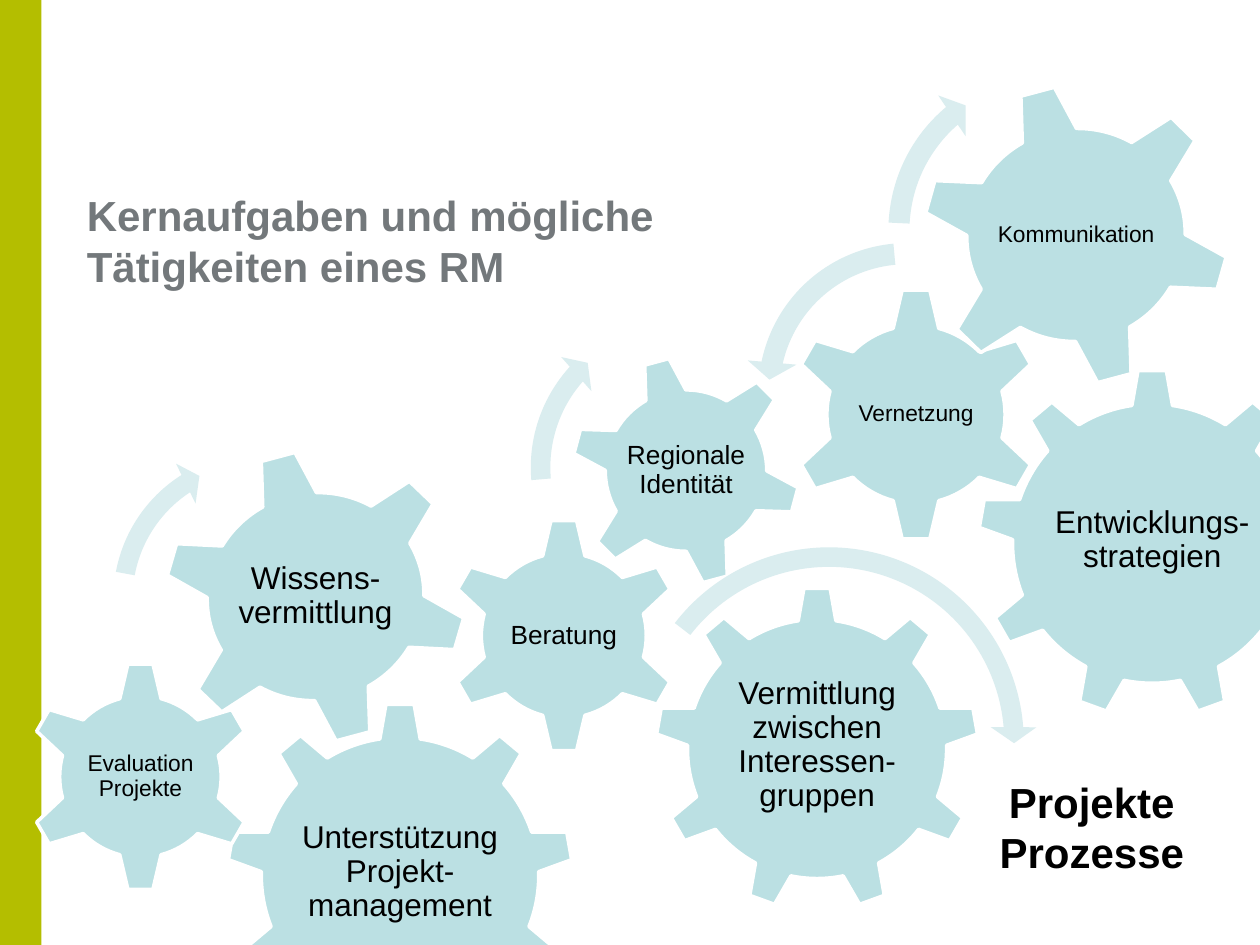
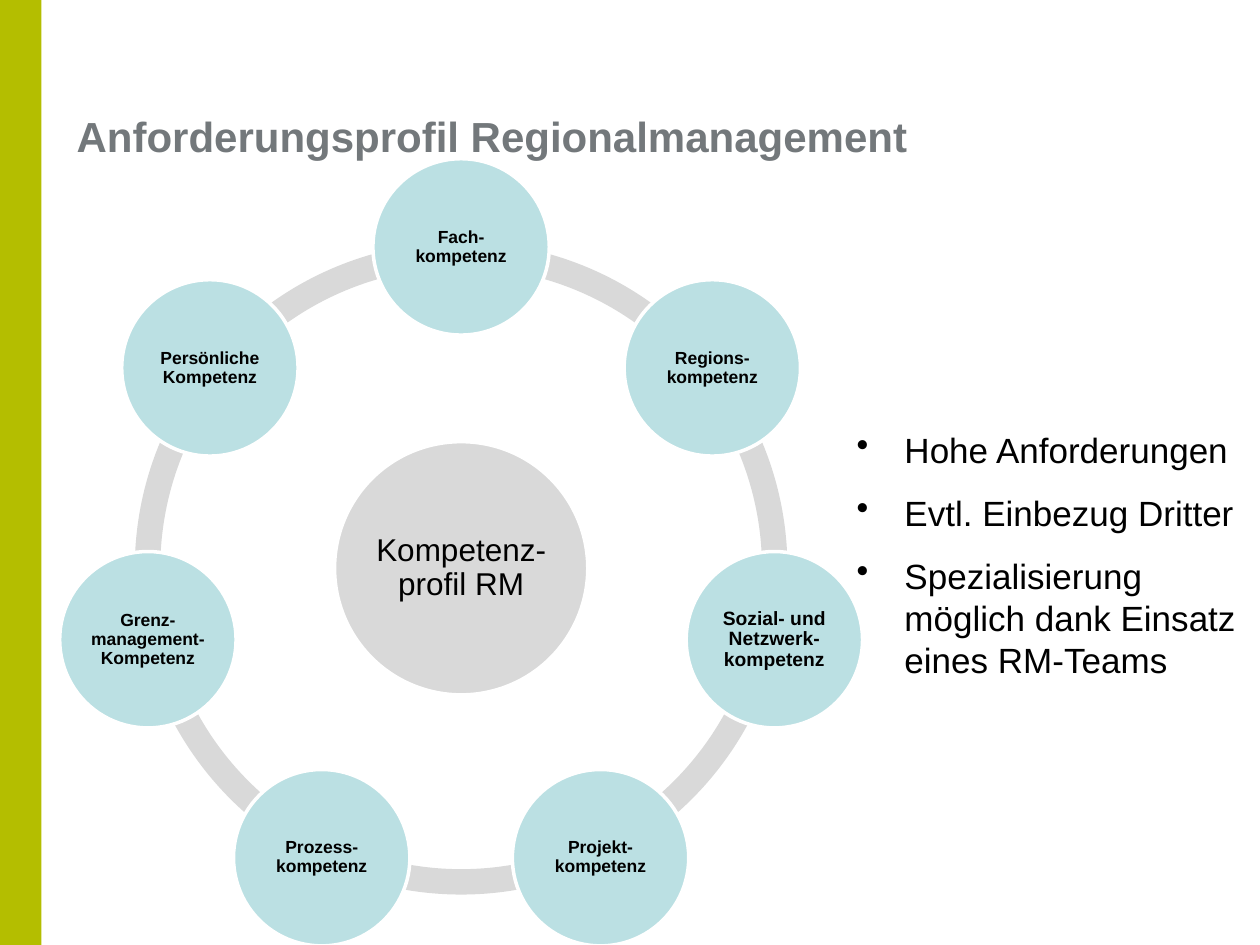
import dataclasses
import math
import typing

import pptx
import pptx.dml.color
import pptx.enum.shapes
import pptx.enum.text
import pptx.util
from lxml import etree
from pptx.util import Inches

# Shared style
FONT = "Arial"
GREEN, GREY, BLACK, WHITE = "B4BE00", "73787B", "000000", "FFFFFF"
TEAL, PALE_TEAL, SILVER = "BBE0E3", "DAEDEF", "D9D9D9"
SLIDE_WIDTH, SLIDE_HEIGHT = 10, 7.5
INSET = 0.02
ADJUST_PER_DEGREE = 0.6

SHAPE = pptx.enum.shapes.MSO_SHAPE
LEFT = pptx.enum.text.PP_ALIGN.LEFT
CENTER = pptx.enum.text.PP_ALIGN.CENTER
TOP = pptx.enum.text.MSO_ANCHOR.TOP
MIDDLE = pptx.enum.text.MSO_ANCHOR.MIDDLE


@dataclasses.dataclass
class Box:
    left: float
    top: float
    width: float
    height: float

    def lengths(self) -> list:
        return [Inches(n) for n in dataclasses.astuple(self)]


def centred_box(x: float, y: float, width: float, height: float) -> Box:
    return Box(x - width / 2, y - height / 2, width, height)


@dataclasses.dataclass
class GearKind:
    shape: typing.Any
    rotation: float
    label_width: float  # share of the gear's width
    label_height: float
    lift: float = 0


NINE_TEETH = GearKind(SHAPE.GEAR_9, 0, 0.6, 0.51, 0.03)
SIX_TEETH = GearKind(SHAPE.GEAR_6, 0, 0.5, 0.49)
SIX_TILTED = GearKind(SHAPE.GEAR_6, 345, 0.56, 0.56)


@dataclasses.dataclass
class Gear:
    kind: GearKind
    box: Box
    label: str
    size: float


@dataclasses.dataclass
class ArrowKind:
    shape: typing.Any
    adjustments: tuple


WIDE_ARC = ArrowKind(SHAPE.CIRCULAR_ARROW, (0.047, 2.99, 25.18, 158.57, 0.055))
SHORT_ARC = ArrowKind(SHAPE.CIRCULAR_ARROW, (0.06, 3.94, 133.14, 105.08, 0.07))
LEFT_ARC = ArrowKind(SHAPE.LEFT_CIRCULAR_ARROW, (0.065, 4.3, 104.89, 148.38, 0.075))


@dataclasses.dataclass
class Arrow:
    kind: ArrowKind
    left: float
    top: float
    diameter: float
    rotation: float = 0


# Gears and arrows from back to front
GEAR_TRAIN = [
    Gear(NINE_TEETH, Box(5.2, 4.66, 2.57, 2.57),
         "Vermittlung zwischen Interessen-gruppen", 18),
    Gear(SIX_TEETH, Box(3.54, 4.11, 1.87, 1.87), "Beratung", 15),
    Gear(SIX_TILTED, Box(4.53, 2.82, 1.83, 1.83), "Regionale Identität", 15),
    Arrow(WIDE_ARC, 4.93, 4.24, 3.3, 313.4),
    Arrow(SHORT_ARC, 4.11, 2.42, 2.58),
    Gear(NINE_TEETH, Box(1.8, 5.58, 2.75, 2.74),
         "Unterstützung Projekt-management", 18),
    Gear(SIX_TEETH, Box(0.2, 5.25, 1.83, 1.83), "Evaluation Projekte", 13),
    Gear(SIX_TILTED, Box(1.29, 3.56, 2.43, 2.35), "Wissens-vermittlung", 18),
    Arrow(SHORT_ARC, 0.8, 3.49, 2.52, 15.4),
    Gear(NINE_TEETH, Box(7.76, 2.93, 2.77, 2.77),
         "Entwicklungs-\vstrategien", 18),
    Gear(SIX_TEETH, Box(6.26, 2.28, 2.02, 2.02), "Vernetzung", 13),
    Gear(SIX_TILTED, Box(7.31, 0.66, 2.46, 2.41), "Kommunikation", 13),
    Arrow(LEFT_ARC, 5.91, 1.82, 2.58, 17.4),
    Arrow(SHORT_ARC, 6.94, 0.44, 2.78, 7.7),
]


@dataclasses.dataclass
class Competence:
    label: str
    size: float = 10


# Clockwise from the top
COMPETENCES = [
    Competence("Fach-kompetenz"),
    Competence("Regions-kompetenz"),
    Competence("Sozial- und Netzwerk-kompetenz", 11),
    Competence("Projekt-kompetenz"),
    Competence("Prozess-kompetenz"),
    Competence("Grenz-management-Kompetenz"),
    Competence("Persönliche Kompetenz"),
]
RING_X, RING_Y = 3.66, 4.51
ARC_DIAMETER, ORBIT_RADIUS = 5.18, 2.55
HUB_DIAMETER, COMPETENCE_DIAMETER = 2.01, 1.4

DEMANDS = [
    "Hohe Anforderungen",
    "Evtl. Einbezug Dritter",
    "Spezialisierung möglich dank Einsatz eines RM-Teams",
]


def rgb(color: str) -> pptx.dml.color.RGBColor:
    return pptx.dml.color.RGBColor.from_string(color)


def add_bullet(para, indent: float) -> None:
    properties = para._p.get_or_add_pPr()
    properties.set("marL", str(Inches(indent)))
    properties.set("indent", str(-Inches(indent)))
    bullet = etree.SubElement(properties, pptx.oxml.ns.qn("a:buChar"))
    bullet.set("char", "•")


def write(shape, text: str, *, size: float, color: str = BLACK,
          bold: bool = False, align=LEFT, anchor=TOP,
          inset: typing.Optional[float] = None, line_spacing: float = 1,
          space_before: float = 0, bullet_indent: float = 0) -> None:
    """Fill a shape; a newline starts a paragraph, a vertical tab a line."""
    frame = shape.text_frame
    frame.word_wrap = True
    frame.vertical_anchor = anchor
    if inset is not None:
        frame.margin_left = frame.margin_right = Inches(inset)
        frame.margin_top = frame.margin_bottom = Inches(inset)
    frame.text = text
    for index, para in enumerate(frame.paragraphs):
        para.alignment = align
        para.line_spacing = line_spacing
        if index and space_before:
            para.space_before = pptx.util.Pt(space_before)
        if bullet_indent:
            add_bullet(para, bullet_indent)
        for span in para.runs:
            span.font.name = FONT
            span.font.size = pptx.util.Pt(size)
            span.font.bold = bold
            span.font.color.rgb = rgb(color)


def add_text(page, box: Box, text: str, **style) -> None:
    write(page.shapes.add_textbox(*box.lengths()), text, **style)


def write_label(shape, text: str, size: float, bold: bool = False) -> None:
    write(shape, text, size=size, bold=bold, align=CENTER, anchor=MIDDLE,
          inset=INSET, line_spacing=0.9)


def add_figure(page, kind, box: Box, fill: str, *, outlined: bool = False,
               rotation: float = 0, adjustments: typing.Sequence = ()):
    figure = page.shapes.add_shape(kind, *box.lengths())
    figure.shadow.inherit = False
    figure.rotation = rotation
    figure.fill.solid()
    figure.fill.fore_color.rgb = rgb(fill)
    if outlined:
        figure.line.color.rgb = rgb(WHITE)
        figure.line.width = pptx.util.Pt(2)
    else:
        figure.line.fill.background()
    for index, value in enumerate(adjustments):
        figure.adjustments[index] = value
    return figure


def add_page(deck, title: str, title_box: Box):
    page = deck.slides.add_slide(deck.slide_layouts[6])
    add_figure(page, SHAPE.RECTANGLE, Box(0, 0, 0.33, SLIDE_HEIGHT), GREEN)
    add_text(page, title_box, title, size=24, color=GREY, bold=True,
             anchor=MIDDLE)
    return page


def draw_gear(page, gear: Gear) -> None:
    kind, box = gear.kind, gear.box
    add_figure(page, kind.shape, box, TEAL, outlined=True,
               rotation=kind.rotation)
    label_box = centred_box(box.left + box.width / 2,
                            box.top + box.height / 2 - kind.lift,
                            box.width * kind.label_width,
                            box.height * kind.label_height)
    label = page.shapes.add_textbox(*label_box.lengths())
    write_label(label, gear.label, gear.size)


def draw_arrow(page, arrow: Arrow) -> None:
    box = Box(arrow.left, arrow.top, arrow.diameter, arrow.diameter)
    add_figure(page, arrow.kind.shape, box, PALE_TEAL,
               rotation=arrow.rotation, adjustments=arrow.kind.adjustments)


def draw_circle(page, x: float, y: float, diameter: float, fill: str,
                label: str, size: float, bold: bool = False) -> None:
    circle = add_figure(page, SHAPE.OVAL, centred_box(x, y, diameter, diameter),
                        fill, outlined=True)
    write_label(circle, label, size, bold)


def draw_ring(page) -> None:
    step = 360 / len(COMPETENCES)
    angles = [270 + step * index for index in range(len(COMPETENCES))]
    arc_box = centred_box(RING_X, RING_Y, ARC_DIAMETER, ARC_DIAMETER)
    for angle in angles:
        start, end = (a % 360 * ADJUST_PER_DEGREE for a in (angle, angle + step))
        add_figure(page, SHAPE.BLOCK_ARC, arc_box, SILVER,
                   adjustments=(start, end, 0.039))
    draw_circle(page, RING_X, RING_Y, HUB_DIAMETER, SILVER,
                "Kompetenz-profil RM", 18)
    for angle, competence in zip(angles, COMPETENCES):
        x = RING_X + ORBIT_RADIUS * math.cos(math.radians(angle))
        y = RING_Y + ORBIT_RADIUS * math.sin(math.radians(angle))
        draw_circle(page, x, y, COMPETENCE_DIAMETER, TEAL, competence.label,
                    competence.size, bold=True)


def build_tasks_page(deck) -> None:
    page = add_page(deck, "Kernaufgaben und mögliche\vTätigkeiten eines RM",
                    Box(0.59, 1.39, 5.12, 1.03))
    for part in GEAR_TRAIN:
        if isinstance(part, Gear):
            draw_gear(page, part)
        else:
            draw_arrow(page, part)
    add_text(page, Box(7.76, 6.11, 1.81, 0.91), "Projekte\vProzesse",
             size=24, bold=True, align=CENTER)


def build_profile_page(deck) -> None:
    page = add_page(deck, "Anforderungsprofil Regionalmanagement",
                    Box(0.51, 0.76, 7.72, 0.63))
    add_text(page, Box(6.7, 3.35, 3.31, 2.29), "\n".join(DEMANDS),
             size=20, space_before=12, bullet_indent=0.38)
    draw_ring(page)


def main() -> None:
    deck = pptx.Presentation()
    deck.slide_width = Inches(SLIDE_WIDTH)
    deck.slide_height = Inches(SLIDE_HEIGHT)
    build_tasks_page(deck)
    build_profile_page(deck)
    deck.save("out.pptx")


if __name__ == "__main__":
    main()
